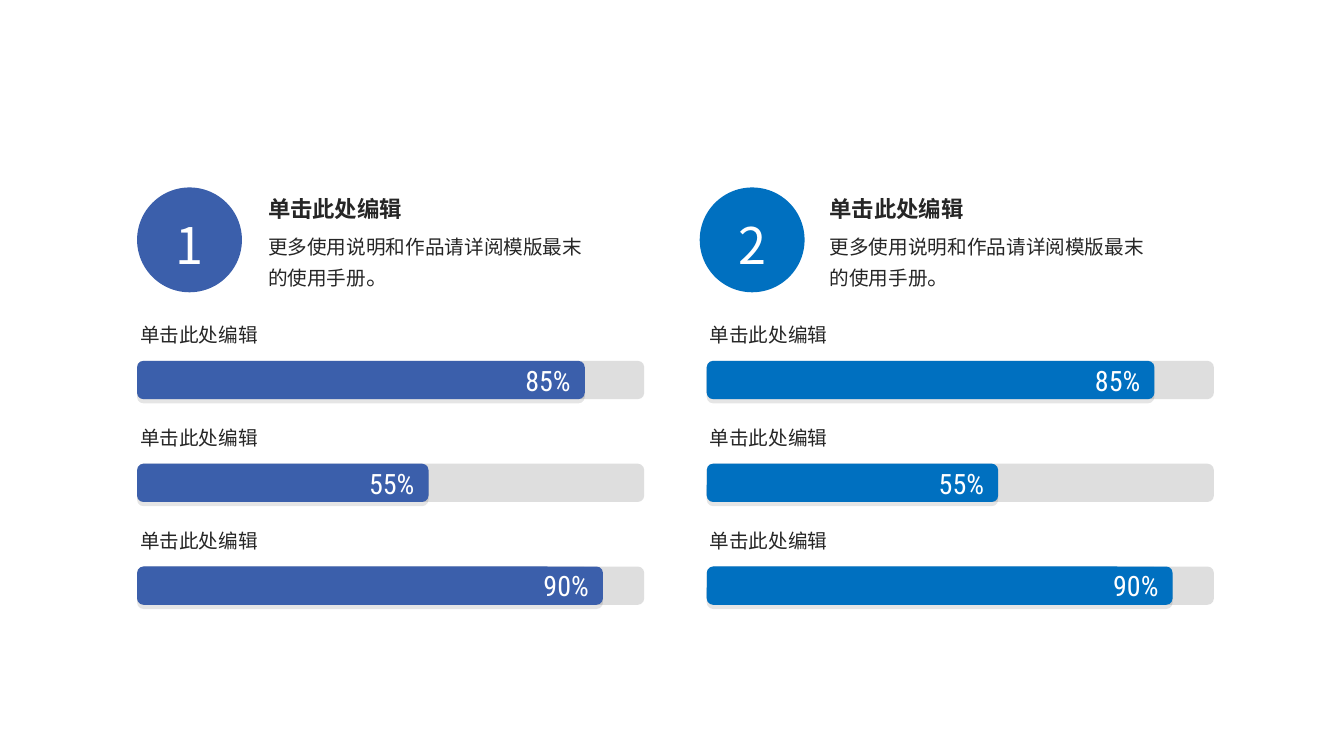
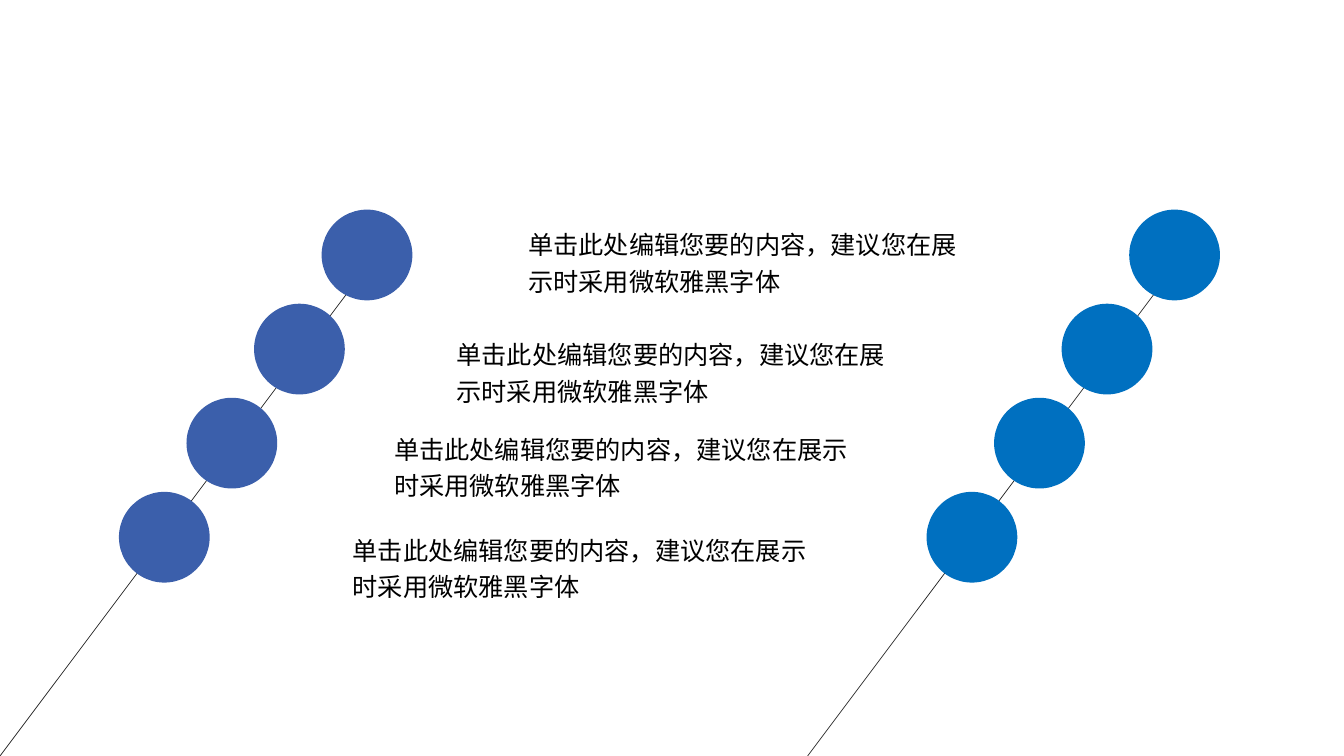
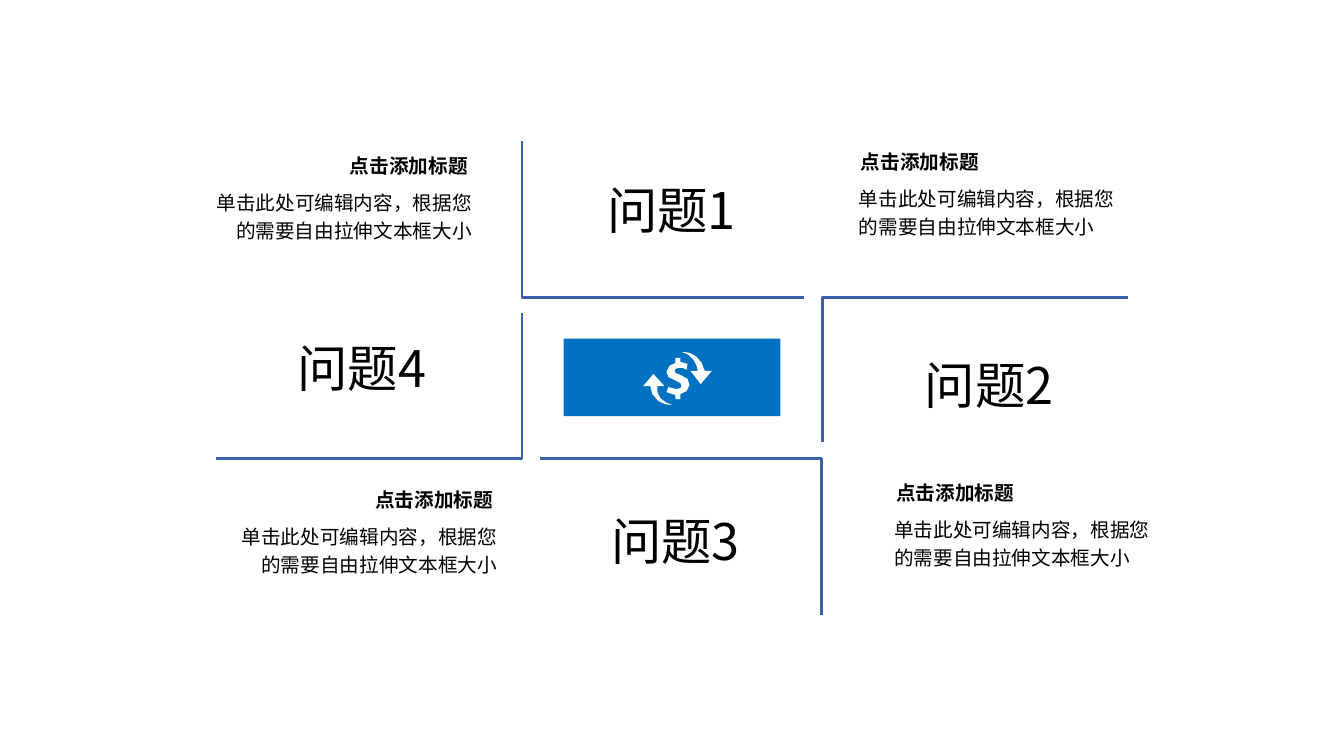
"""Build three slides: progress bars, two diagonal chains and a four-question layout."""
from dataclasses import dataclass

from lxml import etree
from pptx import Presentation
from pptx.dml.color import RGBColor
from pptx.enum.shapes import MSO_CONNECTOR, MSO_SHAPE
from pptx.enum.text import MSO_ANCHOR, MSO_AUTO_SIZE, PP_ALIGN
from pptx.oxml.ns import qn
from pptx.util import Inches, Pt

ELLIPSE, RECT, ROUND = MSO_SHAPE.OVAL, MSO_SHAPE.RECTANGLE, MSO_SHAPE.ROUNDED_RECTANGLE
STRAIGHT = MSO_CONNECTOR.STRAIGHT
LEFT, CENTER, RIGHT = PP_ALIGN.LEFT, PP_ALIGN.CENTER, PP_ALIGN.RIGHT
MIDDLE = MSO_ANCHOR.MIDDLE
GROW, FIXED = MSO_AUTO_SIZE.SHAPE_TO_FIT_TEXT, MSO_AUTO_SIZE.NONE


@dataclass(frozen=True)
class Theme:
    indigo: RGBColor = RGBColor(0x3B, 0x5F, 0xAB)
    blue: RGBColor = RGBColor(0x00, 0x70, 0xC0)
    track: RGBColor = RGBColor(0xBF, 0xBF, 0xBF)
    dark: RGBColor = RGBColor(0x26, 0x26, 0x26)
    black: RGBColor = RGBColor(0, 0, 0)
    white: RGBColor = RGBColor(0xFF, 0xFF, 0xFF)
    cjk: str = "Noto Sans CJK SC"
    figures: str = "Roboto Condensed"
    latin: str = "Arial"
    small: Pt = Pt(14)
    heading: Pt = Pt(16)
    medium: Pt = Pt(18)
    value: Pt = Pt(20)
    large: Pt = Pt(36)
    hairline: Pt = Pt(0.5)
    bracket: Pt = Pt(1.75)


T = Theme()
BOX = {"word_wrap": True, "auto_size": GROW}
FLUSH = {"margin_left": 0, "margin_right": 0, "margin_top": 0, "margin_bottom": 0}
TIGHT = {"line_spacing": 0.9, "space_before": Pt(6)}
LOOSE = {"line_spacing": 1.2, "space_before": Pt(2.8)}

STYLES = {
    "label": {"frame": BOX, "para": TIGHT, "color": T.dark,
              "font": {"name": T.cjk, "size": T.small}},
    "heading": {"frame": BOX, "para": TIGHT, "color": T.dark,
                "font": {"name": T.cjk, "size": T.heading, "bold": True}},
    "body": {"frame": BOX, "para": LOOSE, "color": T.dark,
             "font": {"name": T.cjk, "size": T.small}},
    "number": {"frame": BOX, "para": {"alignment": CENTER}, "color": T.white,
               "font": {"name": T.cjk, "size": T.large}},
    "value": {"frame": {"word_wrap": False, "auto_size": FIXED, "vertical_anchor": MIDDLE,
                        "margin_right": Inches(0.12)},
              "para": {"alignment": RIGHT}, "color": T.white,
              "font": {"name": T.figures, "size": T.value}},
    "step": {"frame": BOX, "para": {"line_spacing": 1.2, "space_before": Pt(3.6)},
             "color": T.black, "font": {"name": T.cjk, "size": T.medium}},
    "question": {"frame": {**BOX, **FLUSH, "vertical_anchor": MIDDLE},
                 "para": {"alignment": CENTER}, "color": T.black,
                 "font": {"name": T.cjk, "size": T.large}},
    "caption": {"frame": BOX, "para": {}, "color": T.black,
                "font": {"name": T.cjk, "size": T.small, "bold": True}},
    "detail": {"frame": BOX, "para": LOOSE, "color": T.black,
               "font": {"name": T.latin, "size": T.small}},
}


def write(tf, style, *runs, **para):
    """Fill a text frame with one paragraph of runs, each a text or a (text, size) pair."""
    look = STYLES[style]
    p = tf.paragraphs[0]
    for target, values in ((tf, look["frame"]), (p, {**look["para"], **para})):
        for name, value in values.items():
            setattr(target, name, value)
    for run in runs:
        text, size = run if isinstance(run, tuple) else (run, look["font"]["size"])
        r = p.add_run()
        r.text = text
        for name, value in {**look["font"], "size": size}.items():
            setattr(r.font, name, value)
        r.font.color.rgb = look["color"]
        latin = r.font._element.find(qn("a:latin"))
        ea = etree.Element(qn("a:ea"), typeface=T.cjk)
        latin.addnext(ea)


def add_shape(s, kind, box, fill):
    """Add a plain filled shape without line or shadow."""
    sp = s.shapes.add_shape(kind, *map(Inches, box))
    sp.fill.solid()
    sp.fill.fore_color.rgb = fill
    sp.line.fill.background()
    sp.shadow.inherit = False
    return sp


prs = Presentation()
prs.slide_width, prs.slide_height = Inches(13.33), Inches(7.5)
blank = prs.slide_layouts[6]

s = prs.slides.add_slide(blank)
columns = [("1", T.indigo, 1.36, 2.56, 1.36), ("2", T.blue, 6.94, 8.13, 7.01)]
bars = [("85%", 4.44), ("55%", 2.89), ("90%", 4.62)]
for number, color, circle_x, text_x, bar_x in columns:
    add_shape(s, ELLIPSE, (circle_x, 1.86, 1.04, 1.04), color)
    tf = s.shapes.add_textbox(*map(Inches, (circle_x + 0.16, 2.08, 0.72, 0.66))).text_frame
    write(tf, "number", number)
    tf = s.shapes.add_textbox(*map(Inches, (text_x, 1.92, 3.38, 0.34))).text_frame
    write(tf, "heading", "单击此处编辑")
    tf = s.shapes.add_textbox(*map(Inches, (text_x, 2.23, 3.38, 0.68))).text_frame
    write(tf, "body", "更多使用说明和作品请详阅模版最末的使用手册", ("。", T.heading))
    for i, (value, width) in enumerate(bars):
        y = 3.58 + 1.02 * i
        tf = s.shapes.add_textbox(*map(Inches, (bar_x - 0.07, y - 0.4, 3.42, 0.4))).text_frame
        write(tf, "label", "单击此处编辑")
        track = add_shape(s, ROUND, (bar_x, y, 5.03, 0.38), T.track)
        rgb = track.fill._xPr.find(qn("a:solidFill"))[0]
        etree.SubElement(rgb, qn("a:alpha"), val="50000")
        bar = add_shape(s, ROUND, (bar_x, y, width, 0.38), color)
        effects = bar._element.spPr.find(qn("a:effectLst"))
        shadow = etree.SubElement(effects, qn("a:outerShdw"), blurRad="0",
                                  dist=str(Pt(3)), dir="5400000", algn="t", rotWithShape="0")
        rgb = etree.SubElement(shadow, qn("a:srgbClr"), val="000000")
        etree.SubElement(rgb, qn("a:alpha"), val="10000")
        write(bar.text_frame, "value", value)

s = prs.slides.add_slide(blank)
for color, x in ((T.indigo, 0), (T.blue, 8.01)):
    chain = s.shapes.add_connector(STRAIGHT, *map(Inches, (x + 3.96, 2.22, x, 7.5)))
    chain.line.color.rgb = T.dark
    chain.line.width = T.hairline
    etree.SubElement(chain._element.spPr, qn("a:effectLst"))
    for i in range(4):
        add_shape(s, ELLIPSE, (x + 3.19 - 0.67 * i, 2.08 + 0.9333 * i, 0.9, 0.9), color)
for x, y, width in ((5.14, 2.17, 4.55), (4.43, 3.26, 4.55), (3.81, 4.2, 4.74), (3.4, 5.2, 4.74)):
    tf = s.shapes.add_textbox(*map(Inches, (x, y, width, 0.8))).text_frame
    write(tf, "step", "单击此处编辑您要的内容，建议您在展示时采用微软雅黑字体")

s = prs.slides.add_slide(blank)
add_shape(s, RECT, (5.59, 3.36, 2.15, 0.77), T.blue)
brackets = [
    [(5.18, 1.4), (5.18, 2.95), (7.97, 2.95)],
    [(11.19, 2.95), (8.16, 2.95), (8.16, 4.39)],
    [(8.15, 6.1), (8.15, 4.55), (5.36, 4.55)],
    [(2.14, 4.55), (5.18, 4.55), (5.18, 3.11)],
]
icon = [
    [(6.99, 3.68), (6.96, 3.6), (6.91, 3.54), (6.84, 3.5), (6.76, 3.49), (6.83, 3.52),
     (6.88, 3.57), (6.91, 3.63), (6.92, 3.68), (6.85, 3.68), (6.95, 3.81), (7.06, 3.68)],
    [(6.55, 3.95), (6.52, 3.89), (6.52, 3.83), (6.59, 3.83), (6.48, 3.71), (6.38, 3.83),
     (6.45, 3.83), (6.47, 3.91), (6.53, 3.98), (6.6, 4.01), (6.67, 4.02), (6.6, 3.99)],
    [(6.75, 3.72), (6.7, 3.7), (6.69, 3.68), (6.7, 3.66), (6.73, 3.65), (6.77, 3.65),
     (6.81, 3.67), (6.82, 3.61), (6.75, 3.59), (6.75, 3.55), (6.7, 3.55), (6.7, 3.6),
     (6.64, 3.63), (6.61, 3.69), (6.63, 3.74), (6.71, 3.78), (6.75, 3.8), (6.76, 3.83),
     (6.75, 3.85), (6.71, 3.86), (6.63, 3.84), (6.61, 3.89), (6.7, 3.92), (6.7, 3.96),
     (6.75, 3.96), (6.75, 3.91), (6.81, 3.88), (6.84, 3.82), (6.82, 3.76)],
]
for points in brackets + icon:
    start, *rest = [tuple(map(Inches, point)) for point in points]
    closed = points in icon
    builder = s.shapes.build_freeform(*start)
    builder.add_line_segments(rest, close=closed)
    sp = builder.convert_to_shape()
    sp.shadow.inherit = False
    if closed:
        sp.fill.solid()
        sp.fill.fore_color.rgb = T.white
        sp.line.fill.background()
    else:
        sp.fill.background()
        sp.line.color.rgb = T.indigo
        sp.line.width = T.bracket

for i, (x, y) in enumerate([(5.27, 1.77), (8.42, 3.51), (5.31, 5.06), (2.2, 3.34)], 1):
    tf = s.shapes.add_textbox(*map(Inches, (x, y, 2.78, 0.61))).text_frame
    write(tf, "question", f"问题{i}")

for x, y, align in ((1.95, 1.48, RIGHT), (8.42, 1.44, LEFT), (8.77, 4.72, LEFT), (2.2, 4.79, RIGHT)):
    caption_x = x + (1.26 if align == RIGHT else 0.02)
    tf = s.shapes.add_textbox(*map(Inches, (caption_x, y, 1.53, 0.34))).text_frame
    write(tf, "caption", "点击添加标题", alignment=align)
    tf = s.shapes.add_textbox(*map(Inches, (x, y + 0.32, 2.83, 0.64))).text_frame
    write(tf, "detail", "单击此处可编辑内容，根据您的需要自由拉伸文本框大小", alignment=align)

prs.save("out.pptx")
